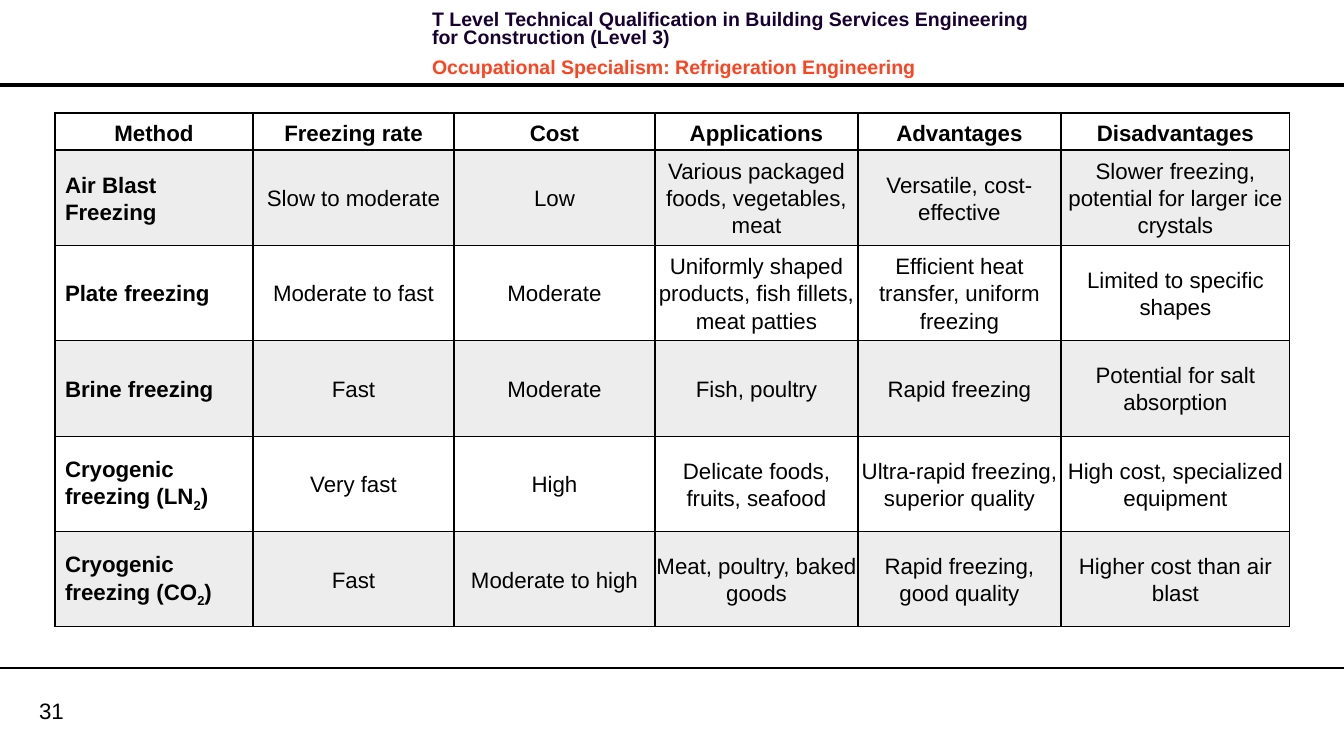
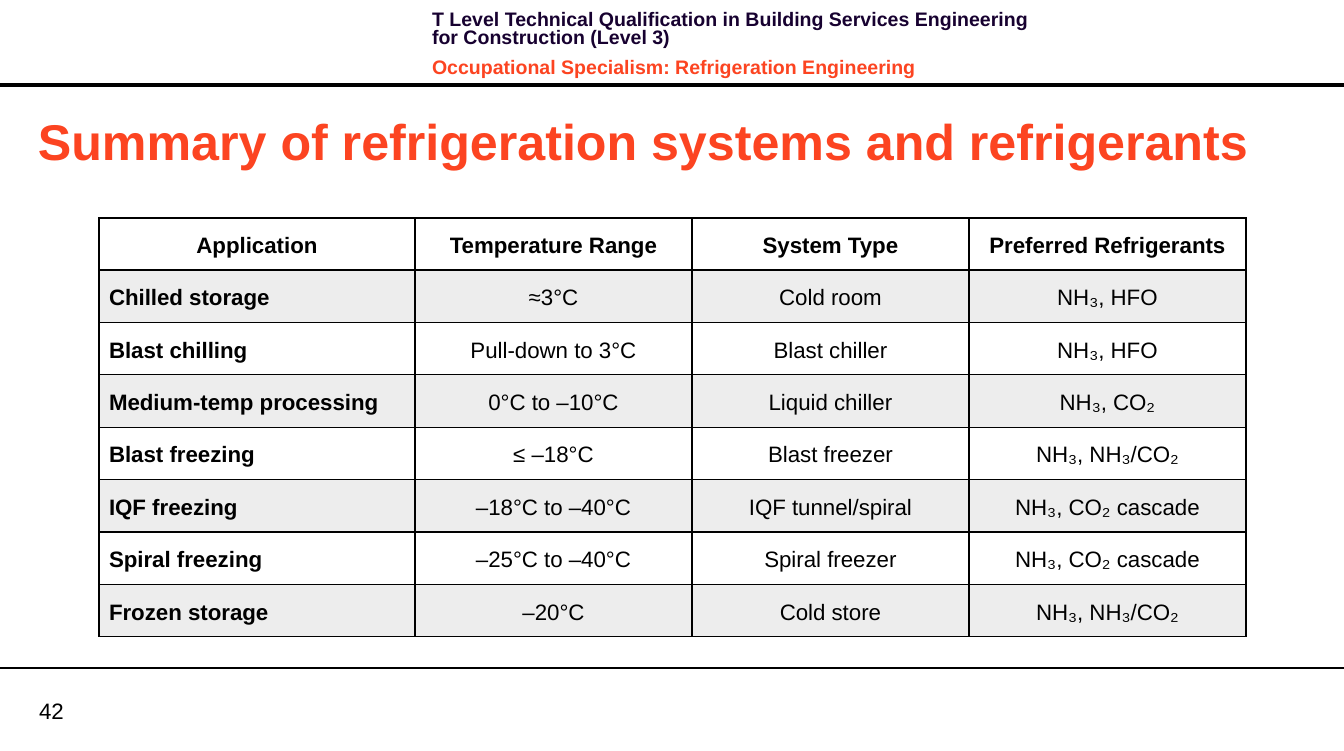
from lxml import etree
from pptx import Presentation
from pptx import util as u
from pptx.dml.color import RGBColor
from pptx.enum import shapes, text
from pptx.oxml.ns import qn

SCALE = 9108
WIDE, HIGH = 1344, 751
FONT = "Arial"
BLACK, NAVY, RED, GREY = "000000", "170130", "FC4421", "A6A6A6"
MID, CENTER = text.MSO_ANCHOR.MIDDLE, text.PP_ALIGN.CENTER


def px(n):
    """Turn px into EMU."""
    return u.Emu(round(n * SCALE))


def color(code):
    """Turn a hex string into a colour."""
    return RGBColor.from_string(code)


class Deck:
    """Holds the style and the current slide."""

    def __init__(self):
        """Open an empty deck of the right size."""
        self.prs = Presentation()
        self.prs.slide_width, self.prs.slide_height = px(WIDE), px(HIGH)

    def start(self, number):
        """Add a slide with its header, band, footer line and number."""
        self.slide = self.prs.slides.add_slide(self.prs.slide_layouts[6])
        self.band(83, 4)
        head = self.box(422, 7, 642, 64, (10, 5))
        first = head.paragraphs[0]
        self.label(first, "T Level Technical Qualification in Building Services "
                   "Engineering for Construction (Level 3)", 14, NAVY, True)
        second = head.add_paragraph()
        self.label(second, "Occupational Specialism: Refrigeration Engineering",
                   14, RED, True)
        second.space_before = u.Pt(4)
        for par in head.paragraphs:
            par.line_spacing, par.space_after = u.Pt(13.1), u.Pt(4)
        foot = self.box(39, 697, 64, 27, (0, 0), MID)
        self.label(foot.paragraphs[0], str(number), 16, BLACK)
        self.rule(668)

    def band(self, top, height):
        """Draw a solid band across the slide."""
        bar = self.slide.shapes.add_shape(
            shapes.MSO_SHAPE.RECTANGLE, 0, px(top), px(WIDE), px(height))
        bar.shadow.inherit = False
        bar.fill.solid()
        bar.fill.fore_color.rgb = color(BLACK)
        bar.line.fill.background()

    def rule(self, top):
        """Draw a thin line across the slide."""
        line = self.slide.shapes.add_connector(
            shapes.MSO_CONNECTOR.STRAIGHT, 0, px(top), px(WIDE), px(top))
        line.line.color.rgb = color(BLACK)
        line.line.width = u.Pt(0.75)
        etree.SubElement(line._element.spPr, qn("a:effectLst"))

    def box(self, left, top, width, height, inset, anchor=text.MSO_ANCHOR.TOP):
        """Add a wrapping text box and return its frame."""
        frame = self.slide.shapes.add_textbox(
            px(left), px(top), px(width), px(height)).text_frame
        frame.word_wrap = True
        frame.vertical_anchor = anchor
        frame.margin_left = frame.margin_right = px(inset[0])
        frame.margin_top = frame.margin_bottom = px(inset[1])
        return frame

    def label(self, par, words, size, tint, bold=False):
        """Fill a paragraph; text between bars is subscript."""
        for i, part in enumerate(words.split("|")):
            run = par.add_run()
            run.text = part
            if i % 2:
                run._r.get_or_add_rPr().set("baseline", "-25000")
        font = par.font
        font.name, font.size, font.bold = FONT, u.Pt(size), bold
        font.color.rgb = color(tint)

    def title(self, words):
        """Add the slide title."""
        frame = self.box(28, 105, 1277, 71, (10, 5), MID)
        self.label(frame.paragraphs[0], words, 36, RED, True)

    def table(self, left, top, height, head, cols, rows, space, after):
        """Add a ruled table whose body rows share the height left."""
        grid = self.slide.shapes.add_table(
            len(rows), len(cols), px(left), px(top), px(sum(cols)), px(height)).table
        grid.first_row = grid.horz_banding = False
        for col, width in zip(grid.columns, cols):
            col.width = px(width)
        for r, row in enumerate(rows):
            grid.rows[r].height = px((height - head) / (len(rows) - 1) if r else head)
            for c, words in enumerate(row):
                cell, side = grid.cell(r, c), r > 0 and c == 0
                cell.vertical_anchor = MID
                cell.margin_left = cell.margin_right = px(10 if side else 1)
                cell.margin_top = cell.margin_bottom = px(5 if side else 1)
                self.edge(cell, r)
                self.shade(cell, r % 2)
                par = cell.text_frame.paragraphs[0]
                self.label(par, words, 16, BLACK, r == 0 or c == 0)
                par.line_spacing = space if r else 1.15
                par.space_after = u.Pt(after if r else 8)
                if not side:
                    par.alignment = CENTER

    def edge(self, cell, r):
        """Rule a cell, with a heavy line below the heading row."""
        props = cell._tc.get_or_add_tcPr()
        for side in "LRTB":
            heavy = (r, side) in ((0, "B"), (1, "T"))
            line = etree.SubElement(props, qn("a:ln" + side),
                                    w=str(int(u.Pt(2 if heavy else 1))))
            fill = etree.SubElement(line, qn("a:solidFill"))
            etree.SubElement(fill, qn("a:srgbClr"), val=BLACK)

    def shade(self, cell, tinted):
        """Give a cell a light tint or no fill."""
        if not tinted:
            cell.fill.background()
            return
        cell.fill.solid()
        cell.fill.fore_color.rgb = color(GREY)
        tint = cell._tc.tcPr.find(qn("a:solidFill"))[0]
        etree.SubElement(tint, qn("a:alpha"), val="20000")


METHODS = [
    ("Method", "Freezing rate", "Cost", "Applications", "Advantages", "Disadvantages"),
    ("Air Blast Freezing", "Slow to moderate", "Low",
     "Various packaged foods, vegetables, meat", "Versatile, cost-effective",
     "Slower freezing, potential for larger ice crystals"),
    ("Plate freezing", "Moderate to fast", "Moderate",
     "Uniformly shaped products, fish fillets, meat patties",
     "Efficient heat transfer, uniform freezing", "Limited to specific shapes"),
    ("Brine freezing", "Fast", "Moderate", "Fish, poultry", "Rapid freezing",
     "Potential for salt absorption"),
    ("Cryogenic freezing (LN|2|)", "Very fast", "High",
     "Delicate foods, fruits, seafood", "Ultra-rapid freezing, superior quality",
     "High cost, specialized equipment"),
    ("Cryogenic freezing (CO|2|)", "Fast", "Moderate to high",
     "Meat, poultry, baked goods", "Rapid freezing, good quality",
     "Higher cost than air blast"),
]
SYSTEMS = [
    ("Application", "Temperature Range", "System Type", "Preferred Refrigerants"),
    ("Chilled storage", "≈3°C", "Cold room", "NH₃, HFO"),
    ("Blast chilling", "Pull‑down to 3°C", "Blast chiller", "NH₃, HFO"),
    ("Medium‑temp processing", "0°C to –10°C", "Liquid chiller", "NH₃, CO₂"),
    ("Blast freezing", "≤ –18°C", "Blast freezer", "NH₃, NH₃/CO₂"),
    ("IQF freezing", "–18°C to –40°C", "IQF tunnel/spiral", "NH₃, CO₂ cascade"),
    ("Spiral freezing", "–25°C to –40°C", "Spiral freezer", "NH₃, CO₂ cascade"),
    ("Frozen storage", "–20°C", "Cold store", "NH₃, NH₃/CO₂"),
]


def main():
    """Build both slides and save them."""
    deck = Deck()
    deck.start(31)
    deck.table(55, 113, 514, 37, (198, 201, 201, 203, 203, 229), METHODS, 1.1, 12)
    deck.start(42)
    deck.title("Summary of refrigeration systems and refrigerants")
    deck.table(99, 218, 419, 52, (316, 277, 277, 277), SYSTEMS, 1.15, 8)
    deck.prs.save("out.pptx")


if __name__ == "__main__":
    main()
